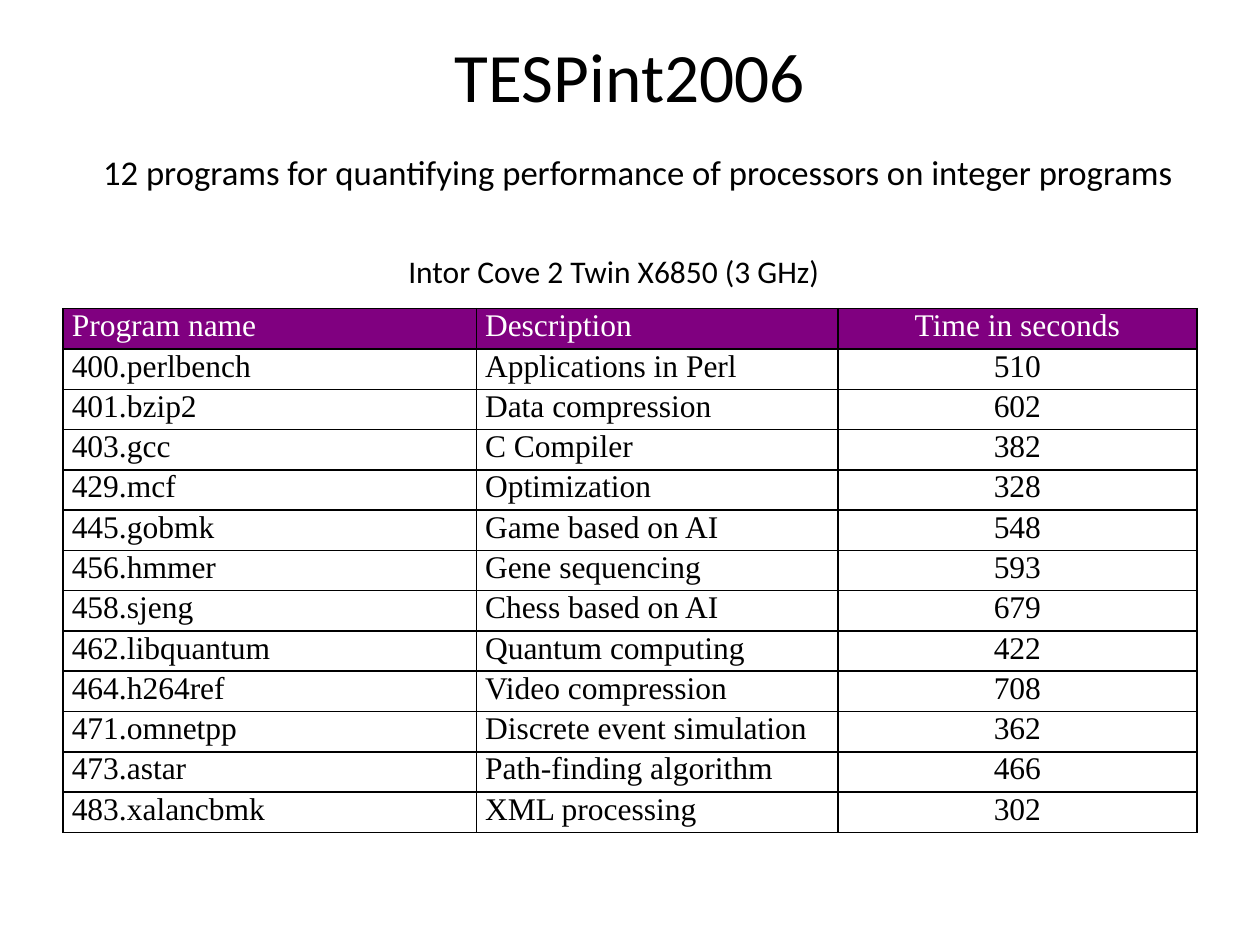
import pptx
import pptx.dml.color
import pptx.enum.text
import pptx.oxml
import pptx.oxml.ns
import pptx.util

WIDTH, HEIGHT = pptx.util.Inches(10), pptx.util.Inches(7.5)
ALIGN = pptx.enum.text.PP_ALIGN
ANCHOR = pptx.enum.text.MSO_ANCHOR
BLACK, WHITE, PURPLE = "000000", "FFFFFF", "800080"
HEADINGS = ("Program name", "Description", "Time in seconds")
BENCHMARKS = (
    ("400.perlbench", "Applications in Perl", 510),
    ("401.bzip2", "Data compression", 602),
    ("403.gcc", "C Compiler", 382),
    ("429.mcf", "Optimization", 328),
    ("445.gobmk", "Game based on AI", 548),
    ("456.hmmer", "Gene sequencing", 593),
    ("458.sjeng", "Chess based on AI", 679),
    ("462.libquantum", "Quantum computing", 422),
    ("464.h264ref", "Video compression", 708),
    ("471.omnetpp", "Discrete event simulation", 362),
    ("473.astar", "Path-finding algorithm", 466),
    ("483.xalancbmk", "XML processing", 302),
)
COLUMN_SHARES = (3.28 / 9, 2.87 / 9, 2.85 / 9)
COLUMN_ALIGNMENTS = (ALIGN.LEFT, ALIGN.LEFT, ALIGN.CENTER)


def color(value):
    return pptx.dml.color.RGBColor.from_string(value)


def share_box(left, top, width, height):
    return (int(WIDTH * left), int(HEIGHT * top), int(WIDTH * width), int(HEIGHT * height))


def add_run(paragraph, text, size, font="Calibri", fill=BLACK):
    run = paragraph.add_run()
    run.text = text
    run.font.size = pptx.util.Pt(size)
    run.font.name = font
    run.font.color.rgb = color(fill)


def add_centered_paragraph(slide, box, anchor):
    frame = slide.shapes.add_textbox(*box).text_frame
    frame.word_wrap = True
    frame.vertical_anchor = anchor
    paragraph = frame.paragraphs[0]
    paragraph.alignment = ALIGN.CENTER
    return paragraph


def add_title(slide, box):
    paragraph = add_centered_paragraph(slide, box, ANCHOR.MIDDLE)
    add_run(paragraph, "TESPint2006", 39.6)
    paragraph.add_line_break()
    add_run(paragraph, " ", 39.6)
    add_run(paragraph, "12 programs for quantifying performance of processors on integer programs", 19.8)


def add_caption(slide, box):
    paragraph = add_centered_paragraph(slide, box, ANCHOR.TOP)
    add_run(paragraph, "Intor Cove 2 Twin X6850 (3 GHz) ", 18)


def add_borders(cell):
    properties = cell._tc.get_or_add_tcPr()
    namespace = pptx.oxml.ns.nsdecls("a")
    for index, side in enumerate(("lnL", "lnR", "lnT", "lnB")):
        properties.insert(index, pptx.oxml.parse_xml(
            f'<a:{side} {namespace} w="{pptx.util.Pt(1)}"><a:solidFill>'
            f'<a:srgbClr val="{BLACK}"/></a:solidFill></a:{side}>'))


def fill_cell(cell, text, alignment, is_heading):
    cell.margin_left = cell.margin_right = pptx.util.Inches(0.07)
    cell.margin_top = cell.margin_bottom = 0
    if is_heading:
        cell.fill.solid()
        cell.fill.fore_color.rgb = color(PURPLE)
    else:
        cell.fill.background()
    add_borders(cell)
    paragraph = cell.text_frame.paragraphs[0]
    paragraph.alignment = alignment
    add_run(paragraph, str(text), 18, "Times New Roman", WHITE if is_heading else BLACK)


def add_benchmark_table(slide, box):
    rows = (HEADINGS, *BENCHMARKS)
    table = slide.shapes.add_table(len(rows), len(HEADINGS), *box).table
    table.horz_banding = False
    for column, share in zip(table.columns, COLUMN_SHARES):
        column.width = int(box[2] * share)
    for row_index, values in enumerate(rows):
        table.rows[row_index].height = box[3] // len(rows)
        for column_index, text in enumerate(values):
            fill_cell(table.cell(row_index, column_index), text,
                      COLUMN_ALIGNMENTS[column_index], row_index == 0)


def main():
    presentation = pptx.Presentation()
    presentation.slide_width, presentation.slide_height = WIDTH, HEIGHT
    slide = presentation.slides.add_slide(presentation.slide_layouts[6])
    add_title(slide, share_box(0.05, 0.04, 0.9, 1 / 6))
    add_benchmark_table(slide, share_box(0.05, 2.45 / 7.5, 0.9, 4.16 / 7.5))
    add_caption(slide, share_box(0.28, 0.26, 0.42, 0.05))
    presentation.save("out.pptx")


if __name__ == "__main__":
    main()
